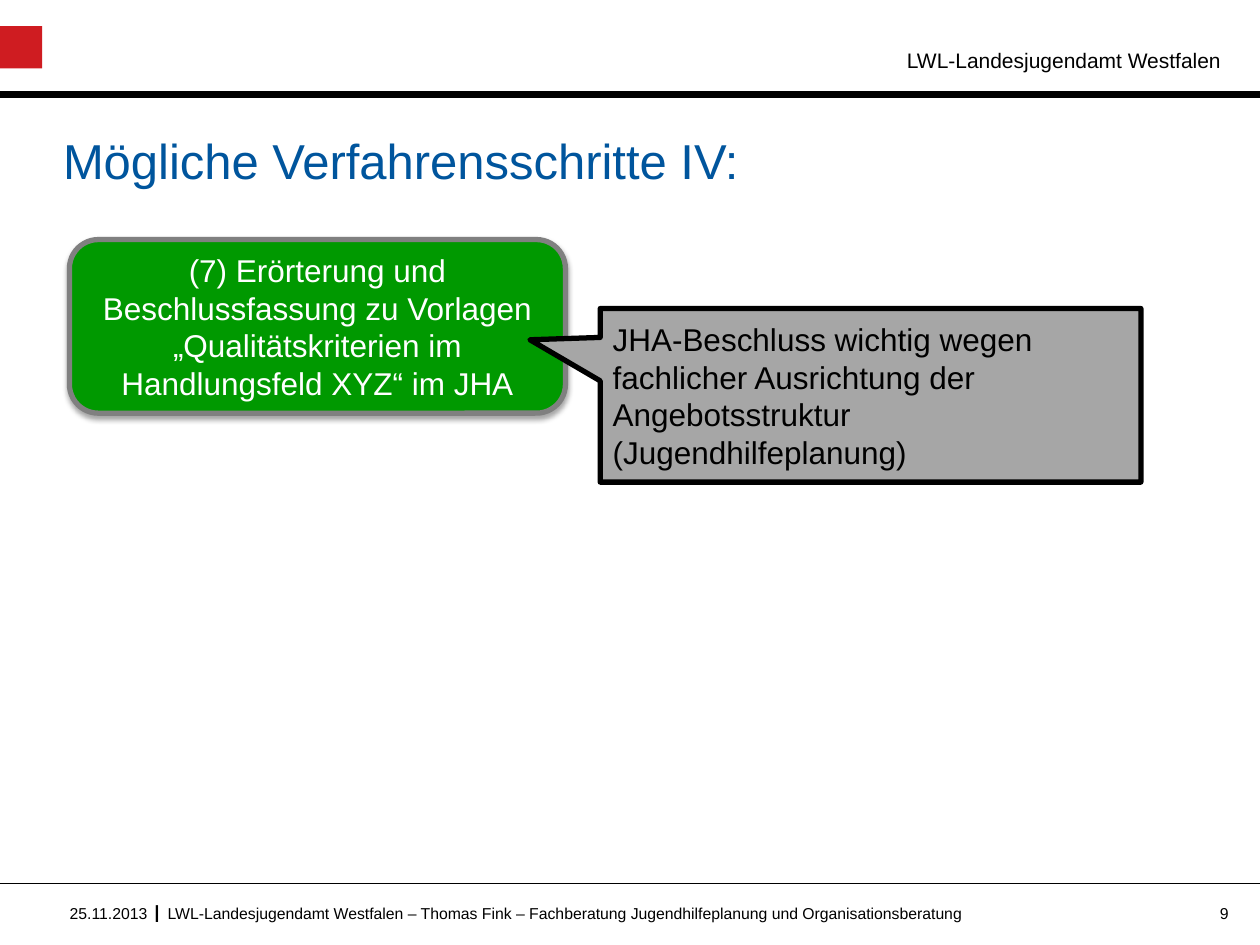
from lxml.etree import SubElement
from pptx import Presentation
from pptx.dml.color import RGBColor
from pptx.enum.shapes import MSO_CONNECTOR, MSO_SHAPE
from pptx.enum.text import MSO_ANCHOR, MSO_AUTO_SIZE, PP_ALIGN
from pptx.oxml.ns import qn
from pptx.util import Cm, Pt

COLORS = {
    "black": "000000",
    "white": "FFFFFF",
    "red": "CF1C21",
    "blue": "00559D",
    "green": "009900",
    "border": "808080",
    "callout": "A6A6A6",
}
NO_MARGINS = dict.fromkeys(("margin_left", "margin_top", "margin_right", "margin_bottom"), 0)


def rgb(name):
    return RGBColor.from_string(COLORS[name])


def assign(target, values):
    for attribute, value in values.items():
        setattr(target, attribute, value)


class SlideBuilder:
    font = "Arial"

    def __init__(self, slide):
        self.slide = slide

    def set_text(self, shape, text, size, color, align=PP_ALIGN.LEFT, spacing=None,
                 **frame_format):
        frame = shape.text_frame
        frame.text = text
        assign(frame, {"word_wrap": True, "auto_size": MSO_AUTO_SIZE.NONE,
                       "vertical_anchor": MSO_ANCHOR.TOP, **frame_format})
        paragraph = frame.paragraphs[0]
        assign(paragraph, {"alignment": align, "line_spacing": spacing})
        font = paragraph.runs[0].font
        assign(font, {"name": self.font, "size": Pt(size)})
        font.color.rgb = rgb(color)

    def title(self, text, box):
        heading = self.slide.shapes.title
        assign(heading, dict(zip(("left", "top", "width", "height"), map(Cm, box))))
        self.set_text(heading, text, 28, "blue", spacing=Pt(32), **NO_MARGINS)

    def label(self, text, box, size, align=PP_ALIGN.LEFT, **frame_format):
        label = self.slide.shapes.add_textbox(*map(Cm, box))
        self.set_text(label, text, size, "black", align, **frame_format)

    def rule(self, y, width):
        rule = self.slide.shapes.add_connector(
            MSO_CONNECTOR.STRAIGHT, 0, Cm(y), Cm(25.4), Cm(y))
        rule.line.color.rgb = rgb("black")
        rule.line.width = Pt(width)
        SubElement(rule._element.spPr, qn("a:effectLst"))

    def block(self, kind, box, fill, border=None):
        block = self.slide.shapes.add_shape(kind, *map(Cm, box))
        block.shadow.inherit = False
        block.fill.solid()
        block.fill.fore_color.rgb = rgb(fill)
        if border:
            block.line.color.rgb = rgb(border)
            block.line.width = Pt(3)
            SubElement(block._element.spPr.find(qn("a:ln")), qn("a:round"))
        else:
            block.line.fill.background()
        return block

    def soft_shadow(self, block):
        effects = block._element.spPr.find(qn("a:effectLst"))
        shadow = SubElement(effects, qn("a:outerShdw"), blurRad=str(Pt(3.1)),
                            dist=str(Pt(1.8)), dir="5400000", rotWithShape="0")
        tone = SubElement(shadow, qn("a:srgbClr"), val=COLORS["black"])
        SubElement(tone, qn("a:alpha"), val="35000")


def main():
    presentation = Presentation()
    assign(presentation, {"slide_width": Cm(25.4), "slide_height": Cm(19.05)})
    builder = SlideBuilder(presentation.slides.add_slide(presentation.slide_layouts[5]))

    builder.rule(1.9, 4)
    builder.block(MSO_SHAPE.RECTANGLE, (0, 0.53, 0.85, 0.85), "red")
    builder.label("LWL-Landesjugendamt Westfalen", (12.7, 0.84, 12.17, 0.77), 12, PP_ALIGN.RIGHT)
    builder.title("Mögliche Verfahrensschritte IV:", (1.27, 2.69, 23.37, 2.59))

    decision = builder.block(MSO_SHAPE.ROUNDED_RECTANGLE, (1.4, 4.83, 10, 3.5), "green", "border")
    builder.soft_shadow(decision)
    builder.set_text(decision, "(7) Erörterung und Beschlussfassung zu Vorlagen "
                     "„Qualitätskriterien im Handlungsfeld XYZ“ im JHA",
                     18, "white", PP_ALIGN.CENTER, vertical_anchor=MSO_ANCHOR.MIDDLE)

    reason = builder.block(MSO_SHAPE.RECTANGULAR_CALLOUT, (12.1, 6.22, 10.9, 3.5),
                           "callout", "black")
    reason.adjustments[0], reason.adjustments[1] = -0.63, -0.32
    builder.set_text(reason, "JHA-Beschluss wichtig wegen fachlicher Ausrichtung der "
                     "Angebotsstruktur (Jugendhilfeplanung)",
                     18, "black", vertical_anchor=MSO_ANCHOR.MIDDLE)

    builder.rule(17.8, 0.5)
    builder.label("I", (3.1, 18.11, 0.28, 0.6), 14, **NO_MARGINS)
    footer = (
        ("25.11.2013", 1.07, 1.9, PP_ALIGN.RIGHT),
        ("LWL-Landesjugendamt Westfalen – Thomas Fink – Fachberatung "
         "Jugendhilfeplanung und Organisationsberatung", 3.38, 18.4, PP_ALIGN.LEFT),
        ("9", 23.5, 1.27, PP_ALIGN.RIGHT),
    )
    for text, left, width, align in footer:
        builder.label(text, (left, 18.21, width, 0.56), 9, align, **NO_MARGINS)

    presentation.save("out.pptx")


if __name__ == "__main__":
    main()
